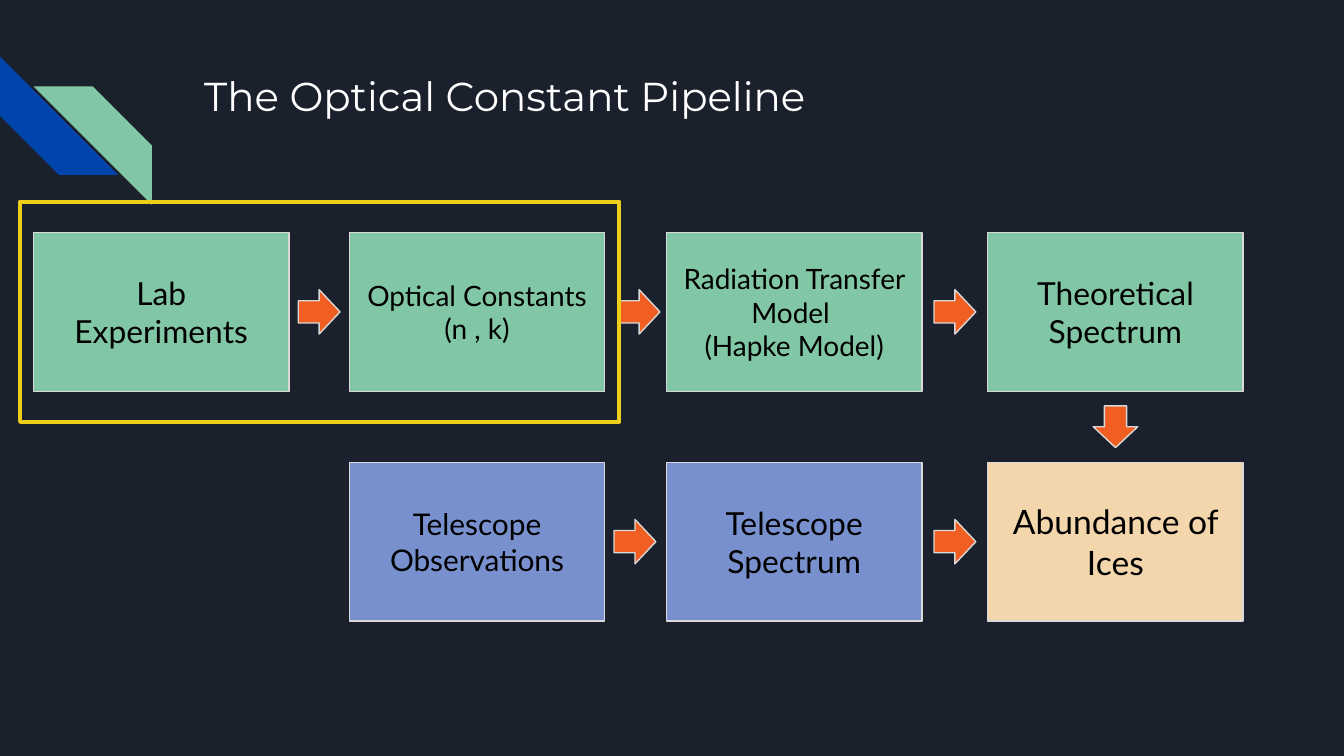
from pptx import Presentation
from pptx.dml.color import RGBColor
from pptx.enum import shapes, text
from pptx.util import Pt

NIGHT = RGBColor(0x1B, 0x21, 0x2C)
BLUE = RGBColor(0x01, 0x45, 0xAC)
GREEN = RGBColor(0x82, 0xC7, 0xA5)
LILAC = RGBColor(0x78, 0x90, 0xCD)
SAND = RGBColor(0xF4, 0xD6, 0xAD)
ORANGE = RGBColor(0xF1, 0x5E, 0x22)
YELLOW = RGBColor(0xEE, 0xCE, 0x1A)
GREY = RGBColor(0xD9, 0xD9, 0xD9)
WHITE = RGBColor(0xFF, 0xFF, 0xFF)
BLACK = RGBColor(0, 0, 0)
KIND = shapes.MSO_SHAPE

WIDE, HIGH = 136.8, 85
COLS = (18, 187.2, 357.1, 529.2)
ROWS = (124.6, 247.7)
TIP_W, TIP_H = 22.4, 23.8
FRAME = {"margin_left": Pt(7.2), "margin_right": Pt(7.2),
         "margin_top": Pt(7.2), "margin_bottom": Pt(7.2),
         "word_wrap": True, "auto_size": text.MSO_AUTO_SIZE.NONE}
STEPS = (
    (0, 0, GREEN, 17, "Lab Experiments"),
    (1, 0, GREEN, 15, "Optical Constants (n , k)"),
    (2, 0, GREEN, 15, "Radiation Transfer Model \n(Hapke Model)"),
    (3, 0, GREEN, 17, "Theoretical Spectrum"),
    (1, 1, LILAC, 16, "Telescope Observations"),
    (2, 1, LILAC, 17, "Telescope\nSpectrum"),
    (3, 1, SAND, 18, "Abundance of Ices"),
)
TIPS = ((159.8, 0), (331.2, 0), (500.4, 0), (329, 1), (500.4, 1))


def apply(item, style):
    """Set each attribute of item from the style dict."""
    for name, value in style.items():
        setattr(item, name, value)


def draw(slide, kind, box, fill=None, line=None, width=0.75, turn=0):
    """Add a flat preset shape in the given box."""
    shape = slide.shapes.add_shape(kind, *map(Pt, box))
    shape.shadow.inherit = False
    shape.rotation = turn
    for part, tint in ((shape.fill, fill), (shape.line.fill, line)):
        if tint is None:
            part.background()
        else:
            part.solid()
            part.fore_color.rgb = tint
    if line is not None:
        shape.line.width = Pt(width)
    return shape


def write(shape, words, anchor, align, font):
    """Fill a shape with paragraphs in one style."""
    frame = shape.text_frame
    apply(frame, {**FRAME, "vertical_anchor": anchor})
    frame.text = words
    for para in frame.paragraphs:
        apply(para, {"alignment": align, "space_before": Pt(0)})
        for run in para.runs:
            tint = font["tint"]
            apply(run.font, {"name": font["name"], "size": Pt(font["size"])})
            run.font.color.rgb = tint


def add_head(slide, box):
    """Place the corner stripes and the title within the box."""
    left, top, width, height = box
    side = 63.4
    draw(slide, KIND.DIAGONAL_STRIPE, (left, top, side, side), BLUE, turn=270)
    draw(slide, KIND.DIAGONAL_STRIPE, (left + 18, top + 16, side, side),
         GREEN, turn=90)
    title = slide.shapes.title
    apply(title, dict(zip(("left", "top", "width", "height"),
                          map(Pt, (left + 102.2, top + 0.7, width - 102.2, height)))))
    write(title, "The Optical Constant Pipeline", text.MSO_ANCHOR.TOP,
          text.PP_ALIGN.LEFT, {"name": "Montserrat", "size": 21.6, "tint": WHITE})


def add_step(slide, box, fill, size, words):
    """Place one labelled step in the box."""
    shape = draw(slide, KIND.RECTANGLE, box, fill, GREY)
    write(shape, words, text.MSO_ANCHOR.MIDDLE, text.PP_ALIGN.CENTER,
          {"name": "Lato", "size": size, "tint": BLACK})


def add_flow(slide, box):
    """Place the steps, arrows and highlight relative to the box."""
    left, top = box[:2]
    for col, row, fill, size, words in STEPS:
        spot = (left + COLS[col], top + ROWS[row], WIDE, HIGH)
        add_step(slide, spot, fill, size, words)
    tips = [(x, ROWS[row] + (HIGH - TIP_H) / 2, 0) for x, row in TIPS]
    mid = (ROWS[0] + HIGH + ROWS[1]) / 2
    tips.append((COLS[3] + (WIDE - TIP_W) / 2, mid - TIP_H / 2, 90))
    for x, y, turn in tips:
        draw(slide, KIND.RIGHT_ARROW, (left + x, top + y, TIP_W, TIP_H),
             ORANGE, GREY, turn=turn)
    draw(slide, KIND.RECTANGLE, (left + 10.8, top + 108, 321, 118),
         line=YELLOW, width=2.25)


def main():
    """Build and save the slide."""
    deck = Presentation()
    apply(deck, {"slide_width": Pt(720), "slide_height": Pt(405)})
    slide = deck.slides.add_slide(deck.slide_layouts[5])
    back = slide.background.fill
    back.solid()
    back.fore_color.rgb = NIGHT
    add_head(slide, (0, 30.3, 475.2, 35.3))
    add_flow(slide, (0, 0, 720, 405))
    deck.save("out.pptx")


if __name__ == "__main__":
    main()
